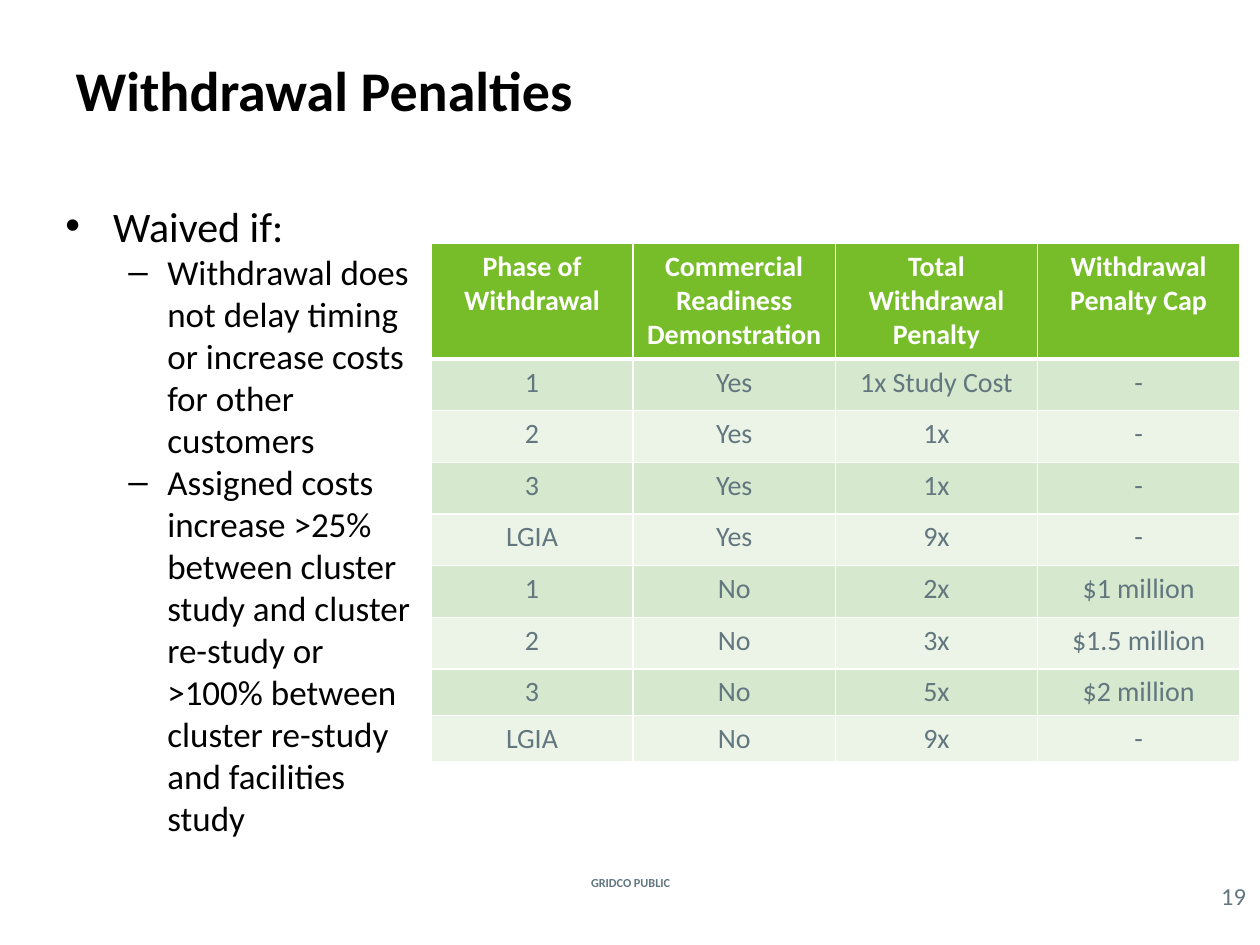
import pptx
import pptx.util
import pptx.dml.color
import pptx.enum.text
import pptx.oxml.ns
import lxml.etree

Inches = pptx.util.Inches
Pt = pptx.util.Pt
ALIGN = pptx.enum.text.PP_ALIGN
ANCHOR = pptx.enum.text.MSO_ANCHOR
GREY, WHITE, BLACK = "62777F", "FFFFFF", "000000"
GREEN, BANDS = "77BD2A", ("ECF4E8", "D6E8CD")

POINTS = [
    (0, "Waived if:"),
    (1, "Withdrawal does not delay timing or increase costs for other customers"),
    (1, "Assigned costs increase >25% between cluster study and cluster "
        "re-study or >100% between cluster re-study and facilities study"),
]
LEVELS = [("•", 0.38, -0.38, 24), ("–", 0.81, -0.31, 20)]
ROWS = [
    ("Phase of Withdrawal", "Commercial Readiness Demonstration",
     "Total Withdrawal Penalty", "Withdrawal Penalty Cap"),
    ("1", "Yes", "1x Study Cost", "-"),
    ("2", "Yes", "1x", "-"),
    ("3", "Yes", "1x", "-"),
    ("LGIA", "Yes", "9x", "-"),
    ("1", "No", "2x", "$1 million"),
    ("2", "No", "3x", "$1.5 million"),
    ("3", "No", "5x", "$2 million"),
    ("LGIA", "No", "9x", "-"),
]
HEIGHTS = [0.92] + [0.41] * 6 + [0.37] * 2


def color(code):
    """Turn a hex string into a colour."""
    return pptx.dml.color.RGBColor.from_string(code)


def style(para, size, code, bold=False, align=ALIGN.LEFT):
    """Format a paragraph and its runs."""
    para.alignment = align
    for run in para.runs:
        font = run.font
        font.name, font.size, font.bold = "Calibri", Pt(size), bold
        font.color.rgb = color(code)


def add_tag(parent, tag, **attrs):
    """Append a drawing element to a parent."""
    return lxml.etree.SubElement(parent, pptx.oxml.ns.qn(tag), attrs)


def add_title(slide, box, text):
    """Place and format the title."""
    title = slide.shapes.title
    title.left, title.top, title.width, title.height = map(Inches, box)
    title.text_frame.text = text
    title.text_frame.vertical_anchor = ANCHOR.MIDDLE
    style(title.text_frame.paragraphs[0], 32, BLACK, True)


def add_list(slide, box, points):
    """Add the bullet list."""
    frame = slide.shapes.add_textbox(*map(Inches, box)).text_frame
    frame.word_wrap = True
    for i, (level, text) in enumerate(points):
        para = frame.add_paragraph() if i else frame.paragraphs[0]
        mark, left, hang, size = LEVELS[level]
        para.text, para.level = text, level
        props = para._p.get_or_add_pPr()
        props.set("marL", str(Inches(left)))
        props.set("indent", str(Inches(hang)))
        add_tag(props, "a:buFont", typeface="Arial")
        add_tag(props, "a:buChar", char=mark)
        style(para, size, BLACK)


def add_label(slide, box, text, size, bold=False):
    """Add a centred footer label without insets."""
    frame = slide.shapes.add_textbox(*map(Inches, box)).text_frame
    frame.word_wrap = True
    frame.margin_left = frame.margin_right = 0
    frame.margin_top = frame.margin_bottom = 0
    frame.vertical_anchor = ANCHOR.MIDDLE
    frame.text = text
    style(frame.paragraphs[0], size, GREY, bold, ALIGN.CENTER)


def fill_cell(cell, text, head, fill):
    """Set a cell's text, borders and fill."""
    cell.text = text
    style(cell.text_frame.paragraphs[0], 16, WHITE if head else GREY,
          head, ALIGN.CENTER)
    props = cell._tc.get_or_add_tcPr()
    for side in "LRTB":
        width = Pt(3 if head and side == "B" else 1)
        line = add_tag(props, "a:ln" + side, w=str(width))
        add_tag(add_tag(line, "a:solidFill"), "a:srgbClr", val=WHITE)
    cell.fill.solid()
    cell.fill.fore_color.rgb = color(fill)


def add_grid(slide, box, rows):
    """Add the penalty table with equal columns."""
    count = len(rows[0])
    table = slide.shapes.add_table(len(rows), count, *map(Inches, box)).table
    for col in table.columns:
        col.width = Inches(box[2] / count)
    for i, row in enumerate(rows):
        table.rows[i].height = Inches(HEIGHTS[i])
        for j, text in enumerate(row):
            fill = BANDS[i % 2] if i else GREEN
            fill_cell(table.cell(i, j), text, i == 0, fill)


def main():
    """Build and save the slide."""
    deck = pptx.Presentation()
    deck.slide_width, deck.slide_height = Inches(10), Inches(7.5)
    slide = deck.slides.add_slide(deck.slide_layouts.get_by_name("Title Only"))
    add_title(slide, (0.5, 0.08, 9, 1.25), "Withdrawal Penalties")
    add_list(slide, (0.42, 1.54, 3, 5.21), POINTS)
    add_grid(slide, (3.42, 1.93, 6.42, sum(HEIGHTS)), ROWS)
    add_label(slide, (4.27, 6.92, 1.47, 0.17), "GRIDCO PUBLIC", 7, True)
    add_label(slide, (9.58, 6.96, 0.42, 0.29), "19", 14)
    deck.save("out.pptx")


if __name__ == "__main__":
    main()
